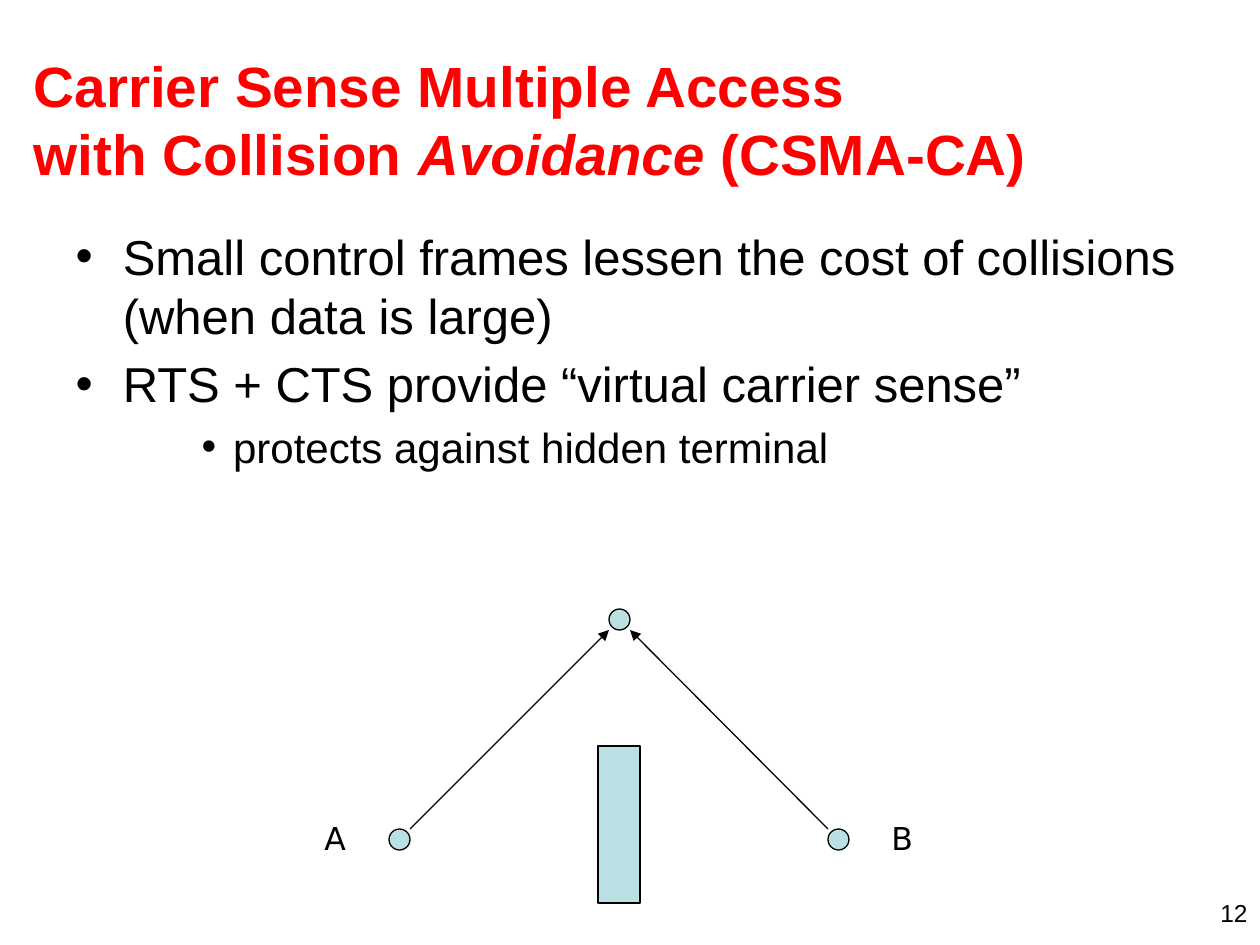
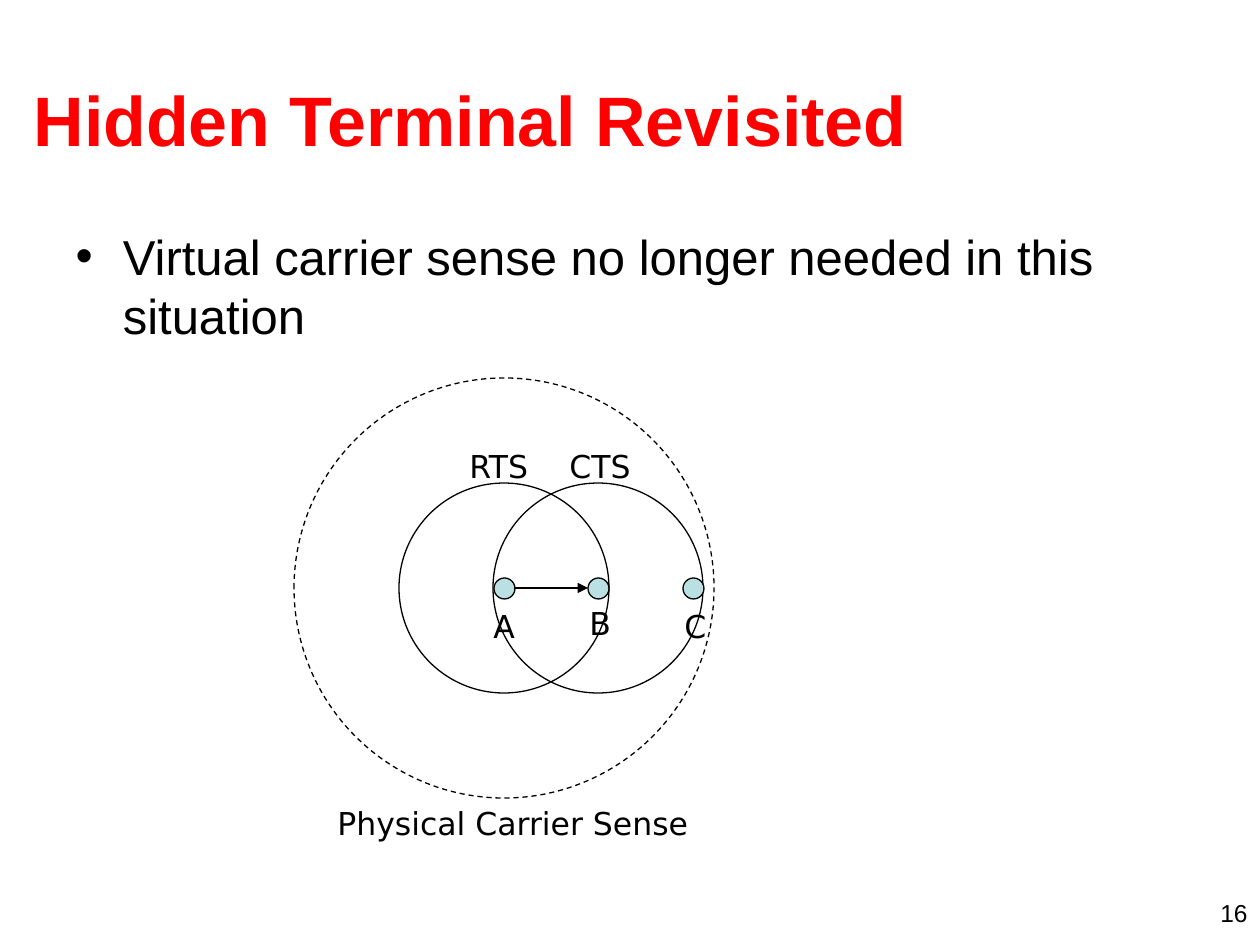
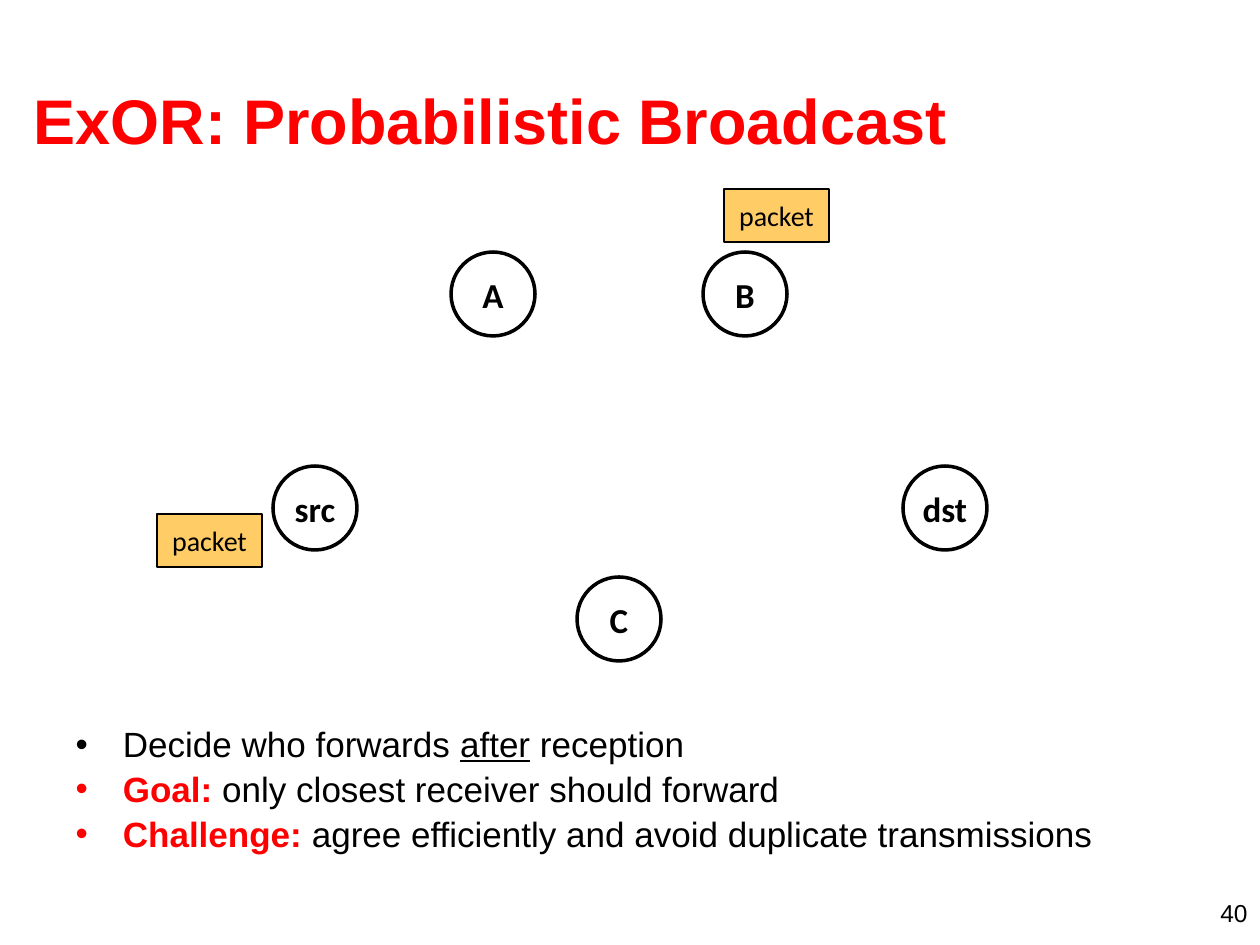
from dataclasses import dataclass

from lxml import etree
from pptx import Presentation
from pptx.dml.color import RGBColor
from pptx.enum.dml import MSO_LINE
from pptx.enum.shapes import MSO_CONNECTOR, MSO_SHAPE
from pptx.enum.text import MSO_ANCHOR, MSO_AUTO_SIZE, PP_ALIGN
from pptx.oxml.ns import qn
from pptx.util import Emu, Pt

OVAL, RECT = MSO_SHAPE.OVAL, MSO_SHAPE.RECTANGLE
STRAIGHT = MSO_CONNECTOR.STRAIGHT
DASH = MSO_LINE.DASH
MIDDLE = MSO_ANCHOR.MIDDLE
LEFT, CENTER, RIGHT = PP_ALIGN.LEFT, PP_ALIGN.CENTER, PP_ALIGN.RIGHT
NO_FIT, FIT_SHAPE = MSO_AUTO_SIZE.NONE, MSO_AUTO_SIZE.SHAPE_TO_FIT_TEXT


@dataclass(frozen=True)
class Theme:
    red: str = "FF0000"
    ink: str = "000000"
    aqua: str = "BBE0E3"
    amber: str = "FFCC66"
    text_font: str = "Arial"
    label_font: str = "DejaVu Sans"
    node_font: str = "Calibri"
    body: int = 28
    sub: int = 24
    compact: int = 20
    label: int = 18
    packet: int = 16
    number: int = 14
    thin: float = 0.75
    thick: float = 2


@dataclass(frozen=True)
class Box:
    x: int
    y: int
    w: int
    h: int

    def inner(self, x, y, w, h):
        return Box(self.x + x, self.y + y, w, h)

    def emu(self):
        return [px(v) for v in (self.x, self.y, self.w, self.h)]


T = Theme()
TITLE = Box(21, 40, 1207, 158)
BODY = Box(63, 220, 1134, 624)
NUMBER = Box(966, 892, 294, 32)
DOT = 21


def px(n):
    return Emu(round(n * 914400 / 126))


def style(font, family, size, color=T.ink, bold=None):
    font.name, font.size, font.bold = family, Pt(size), bold
    font.color.rgb = RGBColor.from_string(color)


def place(sp, box):
    sp.left, sp.top, sp.width, sp.height = box.emu()


def add_runs(p, runs):
    for text, look in runs:
        for i, line in enumerate(text.split("\n")):
            if i:
                p.add_line_break()
            r = p.add_run()
            r.text = line
            r.font.bold = look.get("bold")
            r.font.italic = look.get("italic")
            r.font.underline = look.get("underline")
            if "color" in look:
                r.font.color.rgb = RGBColor.from_string(look["color"])


def add_title(slide, runs, size):
    sp = slide.shapes.title
    place(sp, TITLE)
    tf = sp.text_frame
    tf.vertical_anchor, tf.auto_size = MIDDLE, NO_FIT
    p = tf.paragraphs[0]
    p.alignment = LEFT
    style(p.font, T.text_font, size, T.red, True)
    add_runs(p, runs)


def add_bullets(slide, box, items, spacing=None):
    sp = slide.placeholders[1]
    place(sp, box)
    tf = sp.text_frame
    tf.auto_size = NO_FIT
    for i, (level, size, runs) in enumerate(items):
        p = tf.add_paragraph() if i else tf.paragraphs[0]
        p.level = level
        p.line_spacing = spacing
        style(p.font, T.text_font, size)
        add_runs(p, runs)


def add_text(slide, box, text, family, size, align=LEFT, fit=False):
    sp = slide.shapes.add_textbox(*box.emu())
    tf = sp.text_frame
    tf.word_wrap = not fit
    tf.auto_size = FIT_SHAPE if fit else NO_FIT
    p = tf.paragraphs[0]
    p.text, p.alignment = text, align
    style(p.font, family, size)


def add_label(slide, box, text):
    add_text(slide, box, text, T.label_font, T.label, fit=True)


def add_form(slide, kind, box, fill=None, width=T.thin, dash=None):
    sp = slide.shapes.add_shape(kind, *box.emu())
    sp.shadow.inherit = False
    if fill:
        sp.fill.solid()
        sp.fill.fore_color.rgb = RGBColor.from_string(fill)
    else:
        sp.fill.background()
    sp.line.color.rgb = RGBColor.from_string(T.ink)
    sp.line.width = Pt(width)
    if dash:
        sp.line.dash_style = dash
    return sp


def add_named_form(slide, kind, box, text, size, bold=None, **look):
    tf = add_form(slide, kind, box, **look).text_frame
    tf.word_wrap, tf.vertical_anchor = False, MIDDLE
    p = tf.paragraphs[0]
    p.text, p.alignment = text, CENTER
    style(p.font, T.node_font, size, bold=bold)


def add_dot(slide, box, x, y):
    add_form(slide, OVAL, box.inner(x, y, DOT, DOT), T.aqua)


def add_arrow(slide, box, x1, y1, x2, y2):
    ends = (box.x + x1, box.y + y1, box.x + x2, box.y + y2)
    line = slide.shapes.add_connector(STRAIGHT, *map(px, ends))
    line.line.color.rgb = RGBColor.from_string(T.ink)
    line.line.width = Pt(T.thin)
    etree.SubElement(line.line._get_or_add_ln(), qn("a:tailEnd"), type="triangle")
    etree.SubElement(line._element.spPr, qn("a:effectLst"))


def new_slide(prs, title, size, number):
    slide = prs.slides.add_slide(prs.slide_layouts[1])
    add_title(slide, title, size)
    add_text(slide, NUMBER, number, T.text_font, T.number, RIGHT)
    return slide


def draw_hidden_terminal(slide, box):
    mid, base = box.w // 2, 220
    left, right = 77, box.w - 77 - DOT
    apex = mid - DOT // 2
    for x, y in ((left, base), (apex, 0), (right, base)):
        add_dot(slide, box, x, y)
    add_arrow(slide, box, left + DOT, base, apex, DOT)
    add_arrow(slide, box, right, base, apex + DOT, DOT)
    add_form(slide, RECT, box.inner(mid - DOT, 137, 2 * DOT, 157), T.aqua)
    for text, x in (("A", 0), ("B", box.w - 47)):
        add_label(slide, box.inner(x, 204, 47, 50), text)


def draw_carrier_ranges(slide, box):
    mid = box.w // 2
    reach = mid // 2
    centers = [mid + 189 * i // 2 for i in range(3)]
    add_form(slide, OVAL, box.inner(0, 0, box.w, box.w), dash=DASH)
    for x in centers[:2]:
        add_form(slide, OVAL, box.inner(x - reach, reach, mid, mid))
    for x in centers:
        add_dot(slide, box, x - DOT // 2, mid - DOT // 2)
    add_arrow(slide, box, centers[0] + DOT // 2, mid, centers[1] - DOT // 2, mid)
    for text, x, y, w in (
        ("A", 187, 223, 47),
        ("B", 283, 220, 48),
        ("C", 378, 223, 48),
        ("RTS", 163, 63, 88),
        ("CTS", 263, 63, 88),
        ("Physical Carrier Sense", 31, 420, 378),
    ):
        add_label(slide, box.inner(x, y, w, 50), text)


def draw_broadcast(slide, box):
    for x, y in ((0, 325), (567, 0)):
        add_named_form(slide, RECT, box.inner(x, y, 105, 53), "packet", T.packet, fill=T.amber)
    for text, x, y in (
        ("src", 116, 277),
        ("A", 294, 63),
        ("B", 546, 63),
        ("dst", 746, 277),
        ("C", 420, 388),
    ):
        add_named_form(slide, OVAL, box.inner(x, y, 84, 84), text, T.compact, True, width=T.thick)


def build_avoidance(prs):
    title = [
        ("Carrier Sense Multiple Access\nwith Collision ", {}),
        ("Avoidance", {"italic": True}),
        (" (CSMA-CA)", {}),
    ]
    slide = new_slide(prs, title, 32.4, "12")
    add_bullets(slide, BODY, [
        (0, T.body, [("Small control frames lessen the cost of collisions (when data is large)", {})]),
        (0, T.body, [("RTS + CTS provide “virtual carrier sense”", {})]),
        (2, T.sub, [("protects against hidden terminal", {})]),
    ])
    draw_hidden_terminal(slide, Box(312, 609, 614, 294))


def build_revisited(prs):
    slide = new_slide(prs, [("Hidden Terminal Revisited", {})], 40, "16")
    text = "Virtual carrier sense no longer needed in this situation"
    add_bullets(slide, BODY, [(0, T.body, [(text, {})])])
    draw_carrier_ranges(slide, Box(294, 378, 420, 470))


def build_broadcast(prs):
    slide = new_slide(prs, [("ExOR: Probabilistic Broadcast", {})], 36, "40")
    key = {"bold": True, "color": T.red}
    lines = [
        [("Decide who forwards ", {}), ("after", {"underline": True}), (" reception", {})],
        [("Goal:", key), (" only closest receiver should forward", {})],
        [("Challenge:", key), (" agree efficiently and avoid duplicate transmissions", {})],
    ]
    add_bullets(slide, Box(63, 721, 1197, 173), [(0, T.compact, runs) for runs in lines], 0.9)
    draw_broadcast(slide, Box(157, 189, 830, 472))


def main():
    prs = Presentation()
    prs.slide_width, prs.slide_height = px(1260), px(945)
    build_avoidance(prs)
    build_revisited(prs)
    build_broadcast(prs)
    prs.save("out.pptx")


if __name__ == "__main__":
    main()
